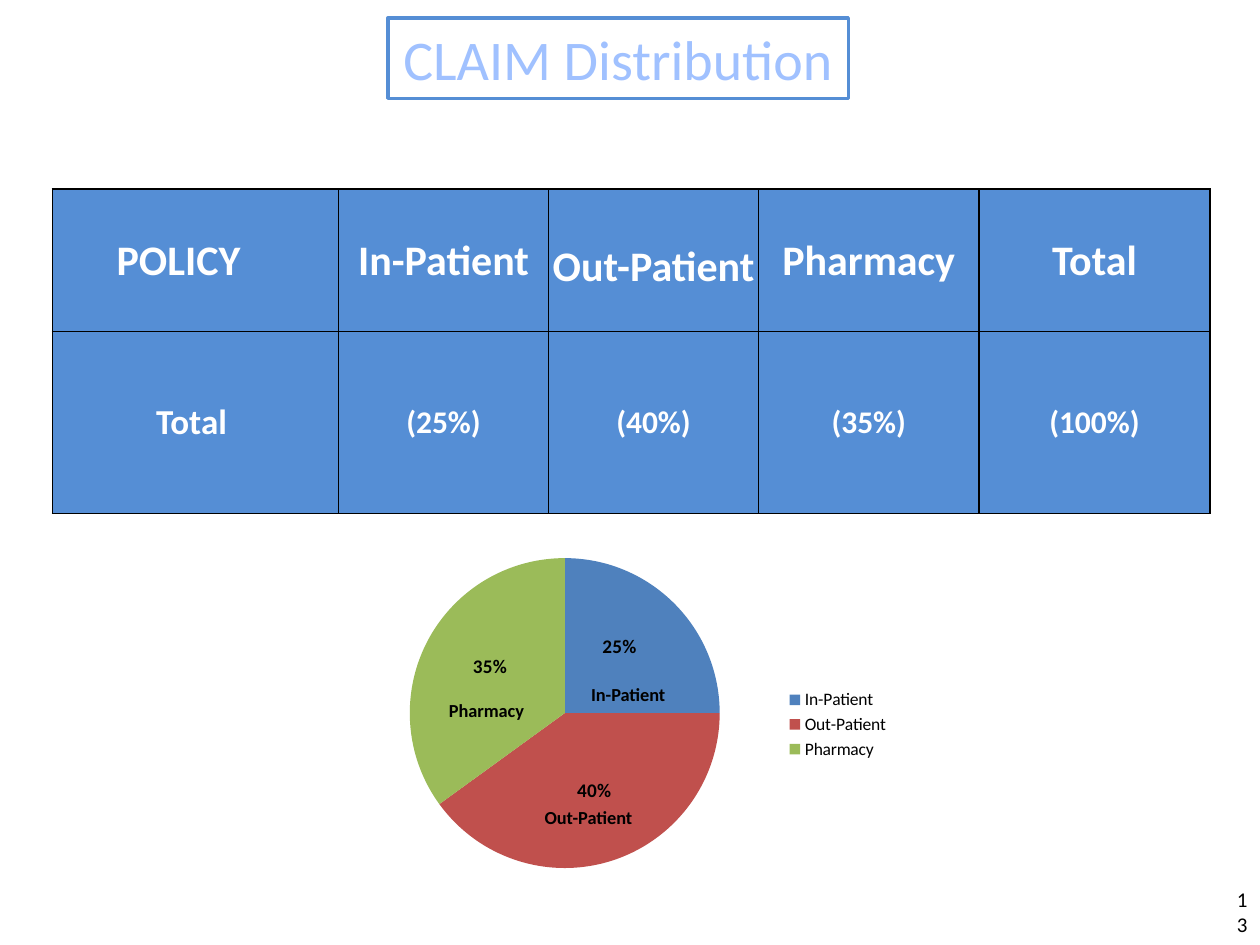
from lxml import etree
from pptx import Presentation
from pptx.chart.data import CategoryChartData
from pptx.dml.color import RGBColor
from pptx.enum.chart import XL_CHART_TYPE, XL_LABEL_POSITION, XL_LEGEND_POSITION
from pptx.enum.text import MSO_ANCHOR, MSO_AUTO_SIZE, PP_ALIGN
from pptx.oxml import parse_xml
from pptx.oxml.ns import nsdecls, qn
from pptx.util import Pt

PIE = XL_CHART_TYPE.PIE
INNER = XL_LABEL_POSITION.CENTER
SIDE = XL_LEGEND_POSITION.RIGHT
MID, TOP = MSO_ANCHOR.MIDDLE, MSO_ANCHOR.TOP
LEFT, CENTER, RIGHT = PP_ALIGN.LEFT, PP_ALIGN.CENTER, PP_ALIGN.RIGHT
FONT = "Calibri"
COLORS = {
    "white": "FFFFFF", "black": "000000", "band": "558ED5", "title": "A0C1FF",
    "in": "4F81BD", "out": "C0504D", "drug": "9BBB59",
}
KINDS = ["In-Patient", "Out-Patient", "Pharmacy"]
SHARES = [-0.25, -0.40, -0.35]
FORMAT = "0%;0%"


def color(name):
    return RGBColor.from_string(COLORS[name])


def style(font, size, name, bold=False):
    font.name = FONT
    font.size = Pt(size)
    font.bold = bold
    font.color.rgb = color(name)


def write(frame, text, size, name, bold=False, align=CENTER, anchor=MID):
    frame.vertical_anchor = anchor
    para = frame.paragraphs[0]
    para.alignment = align
    run = para.add_run()
    run.text = text
    style(run.font, size, name, bold)


def add_title(slide, box):
    title = slide.shapes.title
    title.left, title.top, title.width, title.height = map(Pt, box)
    title.fill.solid()
    title.fill.fore_color.rgb = color("white")
    title.line.color.rgb = color("band")
    title.line.width = Pt(2)
    frame = title.text_frame
    frame.word_wrap = False
    frame.auto_size = MSO_AUTO_SIZE.NONE
    write(frame, "CLAIM Distribution", 32, "title")


def add_edges(cell):
    props = cell._tc.get_or_add_tcPr()
    for spot, side in enumerate(("lnL", "lnR", "lnT", "lnB")):
        edge = etree.Element(qn(f"a:{side}"), w=str(Pt(1)))
        fill = etree.SubElement(edge, qn("a:solidFill"))
        etree.SubElement(fill, qn("a:srgbClr"), val=COLORS["black"])
        props.insert(spot, edge)


def add_grid(slide, box):
    rows = [
        ["POLICY", *KINDS, "Total"],
        ["Total ", *[f"({-share:.0%})" for share in SHARES], "(100%)"],
    ]
    sizes = [[24] * 5, [20, 18, 18, 18, 18]]
    table = slide.shapes.add_table(2, 5, *map(Pt, box)).table
    table.first_row = table.horz_banding = False
    for col, width in zip(table.columns, (163.5, 120, 120, 126, 132)):
        col.width = Pt(width)
    for row, height in zip(table.rows, (81.3, 104.2)):
        row.height = Pt(height)
    for r, row in enumerate(rows):
        for c, text in enumerate(row):
            cell = table.cell(r, c)
            cell.margin_left = cell.margin_right = cell.margin_top = Pt(0.7)
            cell.margin_bottom = Pt(0)
            cell.fill.solid()
            cell.fill.fore_color.rgb = color("band")
            add_edges(cell)
            first = (r, c) == (0, 0)
            write(cell.text_frame, text, sizes[r][c], "white", True,
                  LEFT if first else CENTER)
            cell.vertical_anchor = MID
    table.cell(0, 0).margin_left = Pt(36.7)
    table.cell(0, 2).margin_top = Pt(8)


def set_plot(chart, left, top, width, height):
    area = chart._chartSpace.chart.plotArea
    for old in area.findall(qn("c:layout")):
        area.remove(old)
    area.insert(0, parse_xml(
        f'<c:layout {nsdecls("c")}><c:manualLayout>'
        '<c:layoutTarget val="inner"/>'
        '<c:xMode val="edge"/><c:yMode val="edge"/>'
        f'<c:x val="{left}"/><c:y val="{top}"/>'
        f'<c:w val="{width}"/><c:h val="{height}"/>'
        '</c:manualLayout></c:layout>'))


def add_label(point, right, down):
    label = point.data_label
    label.position = INNER
    style(label.font, 11, "black", True)
    label._dLbl.insert(1, parse_xml(
        f'<c:layout {nsdecls("c")}><c:manualLayout>'
        f'<c:x val="{right}"/><c:y val="{down}"/>'
        '</c:manualLayout></c:layout>'))


def add_pie(slide, box):
    data = CategoryChartData(number_format=FORMAT)
    data.categories = KINDS
    data.add_series("Series 1", SHARES)
    chart = slide.shapes.add_chart(PIE, *map(Pt, box), data).chart
    style(chart.font, 10, "black")
    chart.has_title = False
    chart.has_legend = True
    chart.legend.position = SIDE
    chart.legend.include_in_layout = False
    set_plot(chart, 0.13, 0.06, 0.55, 0.82)
    plot = chart.plots[0]
    plot.vary_by_categories = True
    series = plot.series[0]
    labels = series.data_labels
    labels.show_value = True
    labels.number_format = FORMAT
    labels.number_format_is_linked = False
    moves = [(0, -0.03), (0.01, 0.01), (-0.01, -0.03)]
    for spot, (name, move) in enumerate(zip(("in", "out", "drug"), moves)):
        point = series.points[spot]
        point.format.fill.solid()
        point.format.fill.fore_color.rgb = color(name)
        add_label(point, *move)


def add_note(slide, box, text, size, bold=False, align=CENTER, anchor=TOP):
    frame = slide.shapes.add_textbox(*map(Pt, box)).text_frame
    frame.word_wrap = True
    write(frame, text, size, "black", bold, align, anchor)


def main():
    deck = Presentation()
    deck.slide_width, deck.slide_height = Pt(720), Pt(540)
    slide = deck.slides.add_slide(deck.slide_layouts[5])
    add_note(slide, (695, 508, 25, 26), "13", 12, align=RIGHT, anchor=MID)
    add_grid(slide, (30, 108, 661.5, 185.5))
    add_title(slide, (221.75, 10.2, 263, 46))
    add_pie(slide, (191.5, 306, 324, 216))
    spots = [(328.5, 386.7, 61, 20), (302.5, 457, 67.5, 20), (247.5, 396, 61, 20)]
    for text, box in zip(KINDS, spots):
        add_note(slide, box, text, 10.5, True)
    deck.save("out.pptx")


if __name__ == "__main__":
    main()
